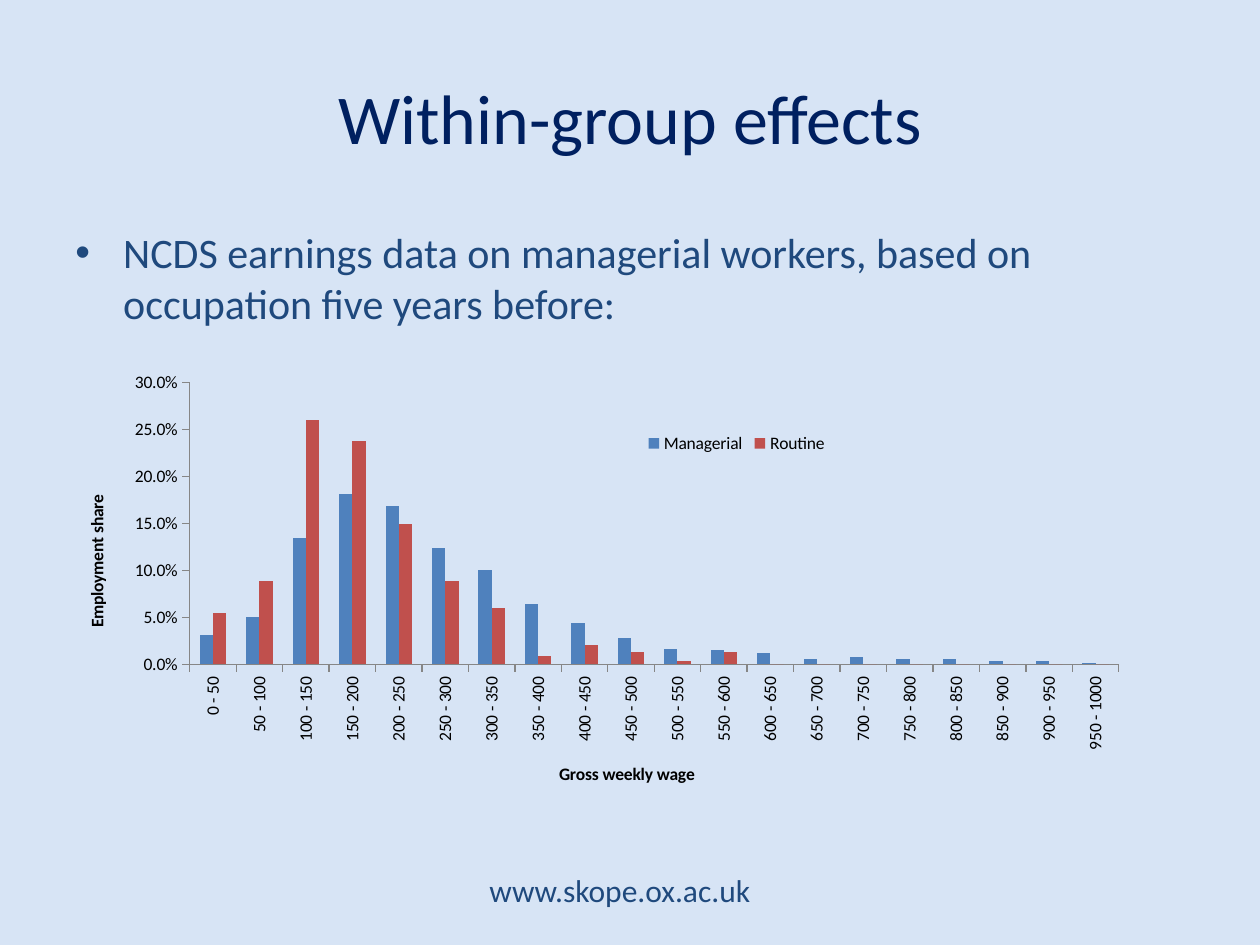
from lxml import etree
from pptx import Presentation
from pptx.chart.data import CategoryChartData
from pptx.dml.color import RGBColor
from pptx.enum.chart import XL_CHART_TYPE, XL_LEGEND_POSITION, XL_TICK_MARK
from pptx.enum.text import MSO_ANCHOR, PP_ALIGN
from pptx.oxml.ns import qn
from pptx.util import Inches, Pt

COLUMN = XL_CHART_TYPE.COLUMN_CLUSTERED
RIGHT = XL_LEGEND_POSITION.RIGHT
OUT, NONE = XL_TICK_MARK.OUTSIDE, XL_TICK_MARK.NONE
MIDDLE, TOP = MSO_ANCHOR.MIDDLE, MSO_ANCHOR.TOP
CENTER, LEFT = PP_ALIGN.CENTER, PP_ALIGN.LEFT

FONT = "Calibri"
COLORS = {"back": "D7E4F5", "title": "002060", "body": "1F497D",
          "label": "000000", "axis": "868686"}

# text, (left, top, width, height), size, colour, anchor, alignment
TITLE = ("Within-group effects", (0.5, 0.3, 9, 1.25), 40, "title", MIDDLE, CENTER)
BODY = ("NCDS earnings data on managerial workers, based on occupation five years before:",
        (0.5, 1.75, 9, 4.95), 24, "body", TOP, LEFT)
FOOTER = ("www.skope.ox.ac.uk", (3.2, 6.86, 3.44, 0.4), 18, "body", MIDDLE, CENTER)

BANDS = [f"{low} - {low + 50}" for low in range(0, 1000, 50)]
SERIES = [
    ("Managerial", "4F81BD",
     [0.031, 0.05, 0.134, 0.181, 0.168, 0.124, 0.1, 0.064, 0.044, 0.028,
      0.016, 0.015, 0.012, 0.006, 0.008, 0.006, 0.006, 0.003, 0.003, 0.001]),
    ("Routine", "C0504D",
     [0.055, 0.089, 0.26, 0.238, 0.149, 0.089, 0.06, 0.009, 0.021, 0.013,
      0.004, 0.013] + [0] * 8),
]
CHART_BOX = (0.51, 2.81, 8.82, 3.46)
PLOT_BOX = (0.113, 0.065, 0.836, 0.647)
LEGEND_BOX = (0.52, 0.17, 0.17, 0.07)


def rgb(name):
    return RGBColor.from_string(COLORS[name])


def style(font, size, color, bold=False):
    font.name, font.size, font.bold = FONT, Pt(size), bold
    font.color.rgb = rgb(color)


def add_text(slide, text, box, size, color, anchor, align):
    frame = slide.shapes.add_textbox(*map(Inches, box)).text_frame
    frame.word_wrap = True
    frame.vertical_anchor = anchor
    para = frame.paragraphs[0]
    para.text, para.alignment = text, align
    style(para.runs[0].font, size, color)
    return para


def add_bullet(para):
    props = para._p.get_or_add_pPr()
    props.set("marL", str(Inches(0.38)))
    props.set("indent", str(Inches(-0.38)))
    etree.SubElement(props, qn("a:buFont")).set("typeface", "Arial")
    etree.SubElement(props, qn("a:buChar")).set("char", "•")


def place(part, index, box, inner=False):
    """Give a chart part a manual layout, in fractions of the chart."""
    for old in part.findall(qn("c:layout")):
        part.remove(old)
    layout = etree.Element(qn("c:layout"))
    manual = etree.SubElement(layout, qn("c:manualLayout"))
    items = [("layoutTarget", "inner")] if inner else []
    items += [("xMode", "edge"), ("yMode", "edge"), *zip("xywh", box)]
    for tag, value in items:
        etree.SubElement(manual, qn("c:" + tag)).set("val", str(value))
    part.insert(index, layout)


def set_axis(axis, title):
    axis.has_major_gridlines = False
    axis.major_tick_mark, axis.minor_tick_mark = OUT, NONE
    axis.format.line.color.rgb = rgb("axis")
    axis.format.line.width = Pt(0.75)
    style(axis.tick_labels.font, 10, "label")
    frame = axis.axis_title.text_frame
    frame.text = title
    style(frame.paragraphs[0].runs[0].font, 10, "label", True)


def add_wages(slide):
    data = CategoryChartData(number_format="0.0%")
    data.categories = BANDS
    for name, _, shares in SERIES:
        data.add_series(name, shares)
    chart = slide.shapes.add_chart(COLUMN, *map(Inches, CHART_BOX), data).chart
    chart.has_title = False
    style(chart.font, 10, "label")
    plot = chart.plots[0]
    plot.gap_width, plot.overlap = 150, 0
    plot.vary_by_categories = False
    for series, (_, color, _) in zip(plot.series, SERIES):
        series.format.fill.solid()
        series.format.fill.fore_color.rgb = RGBColor.from_string(color)

    wage, share = chart.category_axis, chart.value_axis
    set_axis(wage, "Gross weekly wage")
    set_axis(share, "Employment share")
    turn = wage._element.find(qn("c:txPr")).find(qn("a:bodyPr"))
    turn.set("rot", "-5400000")
    turn.set("vert", "horz")
    share.minimum_scale, share.maximum_scale, share.major_unit = 0, 0.3, 0.05
    share.tick_labels.number_format = "0.0%"
    share.tick_labels.number_format_is_linked = False

    chart.has_legend = True
    legend = chart.legend
    legend.position, legend.include_in_layout = RIGHT, False
    style(legend.font, 10, "label")
    place(legend._element, 1, LEGEND_BOX)
    place(chart._chartSpace.chart.plotArea, 0, PLOT_BOX, inner=True)


def main():
    deck = Presentation()
    deck.slide_width, deck.slide_height = Inches(10), Inches(7.5)
    slide = deck.slides.add_slide(deck.slide_layouts[6])
    slide.background.fill.solid()
    slide.background.fill.fore_color.rgb = rgb("back")
    add_text(slide, *FOOTER)
    add_text(slide, *TITLE)
    add_bullet(add_text(slide, *BODY))
    add_wages(slide)
    deck.save("out.pptx")


if __name__ == "__main__":
    main()
